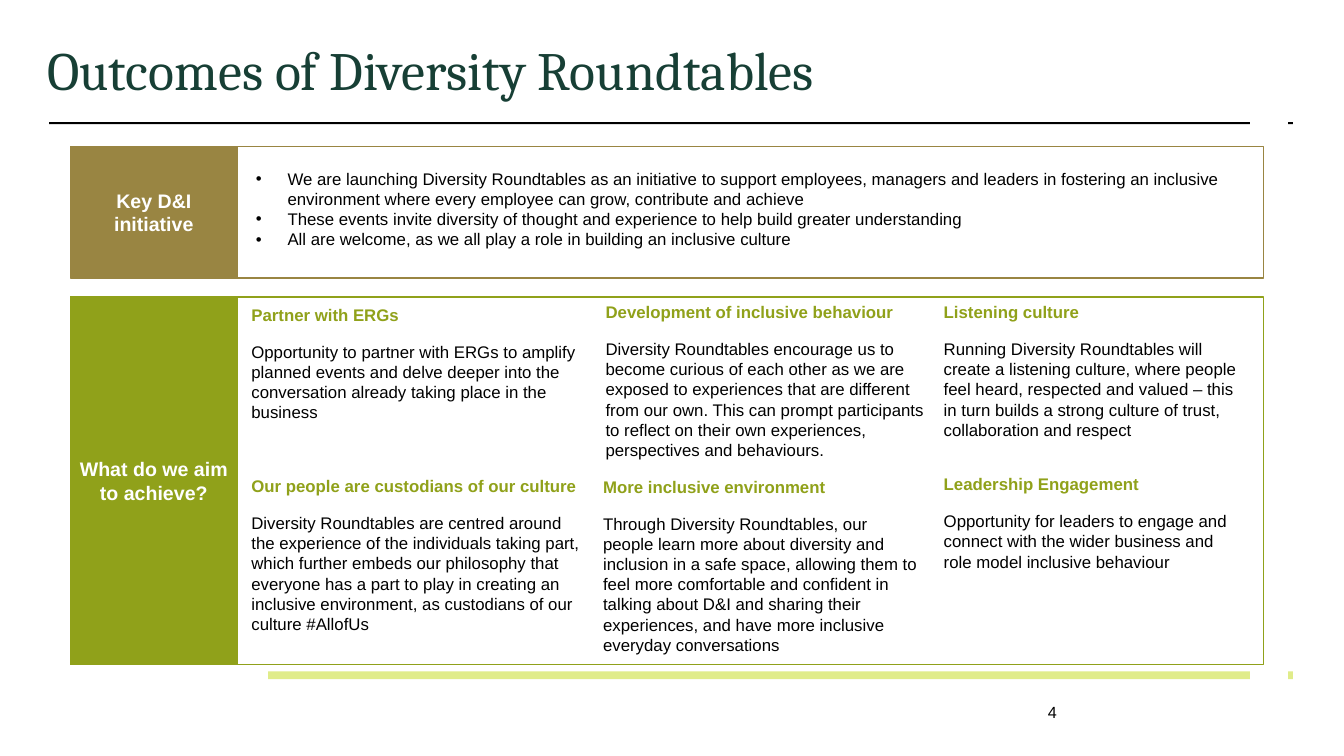
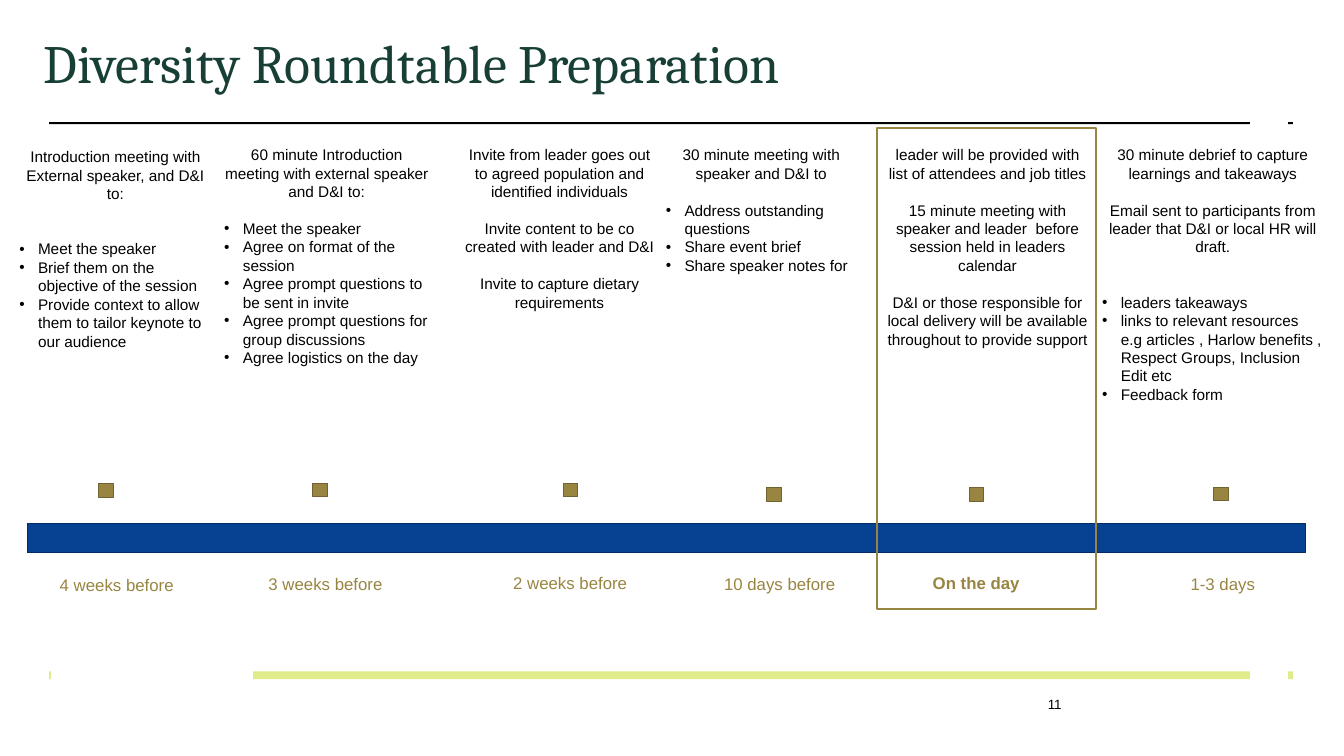
"""Build two slides on the outcomes and the preparation of Diversity Roundtables."""
from dataclasses import dataclass

from lxml.etree import SubElement
from pptx import Presentation
from pptx.dml.color import RGBColor
from pptx.enum.shapes import MSO_SHAPE
from pptx.enum.text import MSO_ANCHOR, PP_ALIGN
from pptx.oxml.ns import qn
from pptx.util import Pt


@dataclass(frozen=True)
class Theme:
    heading_font: str = "Cambria"
    body_font: str = "Arial"
    title_green: str = "173F35"
    olive: str = "90A11A"
    lime: str = "E0EC8A"
    gold: str = "998542"
    dark_gold: str = "716231"
    blue: str = "064192"
    dark_blue: str = "042C62"
    black: str = "000000"
    white: str = "FFFFFF"
    title: float = 60
    block: float = 21.8
    body: float = 18.7
    step: float = 17.1


@dataclass(frozen=True)
class Para:
    text: str
    size: float
    color: str = Theme.black
    bold: bool = False
    centred: bool = False
    before: float = 0
    indent: float = 0
    font: str = Theme.body_font


class Deck:
    def __init__(self, theme):
        self.theme = theme
        self.file = Presentation()
        self.file.slide_width, self.file.slide_height = Pt(1496.9), Pt(841.7)
        self.slide = None

    def start(self, title, title_at, number, number_at, number_size, footer_gap):
        t = self.theme
        self.slide = self.file.slides.add_slide(self.file.slide_layouts[6])
        self.rect((54.7, 136.1, 1385.3, 2.2), fill=t.black)
        self.rect((54.7, 747.4, 1385.3, 8.6), fill=t.lime)
        for gap in ((1393.2, 56.9, 41, 733.7), footer_gap):
            self.rect(gap, fill=t.white, line=t.white)
        heading = Para(title, t.title, t.title_green, font=t.heading_font)
        self.text((*title_at, 1389.6, 76.3), [heading], inset=0)
        self.text((1159.9, number_at, 337, 44.6), [Para(number, number_size)])

    def rect(self, box, fill=None, line=None, weight=1, label=None):
        shape = self.slide.shapes.add_shape(MSO_SHAPE.RECTANGLE, *map(Pt, box))
        shape.shadow.inherit = False
        if fill:
            shape.fill.solid()
            shape.fill.fore_color.rgb = RGBColor.from_string(fill)
        else:
            shape.fill.background()
        if line:
            shape.line.color.rgb = RGBColor.from_string(line)
            shape.line.width = Pt(weight)
        else:
            shape.line.fill.background()
        if label:
            shape.text_frame.vertical_anchor = MSO_ANCHOR.MIDDLE
            self.fill_text(shape.text_frame, [label])

    def text(self, box, paras, inset=None):
        frame = self.slide.shapes.add_textbox(*map(Pt, box)).text_frame
        if inset is not None:
            frame.margin_left = frame.margin_right = Pt(inset)
            frame.margin_top = frame.margin_bottom = Pt(inset)
        self.fill_text(frame, paras)

    def fill_text(self, frame, paras):
        frame.word_wrap = True
        for index, para in enumerate(paras):
            line = frame.add_paragraph() if index else frame.paragraphs[0]
            line.alignment = PP_ALIGN.CENTER if para.centred else PP_ALIGN.LEFT
            line.space_before = Pt(para.before)
            run = line.add_run()
            run.text = para.text
            run.font.name, run.font.size, run.font.bold = para.font, Pt(para.size), para.bold
            run.font.color.rgb = RGBColor.from_string(para.color)
            if para.indent:
                self.bullet(line, para.indent)

    def bullet(self, line, indent):
        props = line._p.get_or_add_pPr()
        props.set("marL", str(Pt(indent)))
        props.set("indent", str(-Pt(indent)))
        SubElement(props, qn("a:buFont")).set("typeface", self.theme.body_font)
        SubElement(props, qn("a:buChar")).set("char", "•")

    def topic(self, box, *sections):
        t = self.theme
        paras = []
        for heading, detail in sections:
            gap = 59.8 if paras else 0
            paras.append(Para(heading, t.body, t.olive, bold=True, before=gap))
            paras.append(Para(detail, t.body, before=t.body))
        self.text(box, paras)

    def panel(self, top, height, color, label):
        t = self.theme
        self.rect((78.5, top, 185.8, height), color, color,
                  label=Para(label, t.block, t.white, bold=True, centred=True))
        self.rect((78.5, top, 1329.1, height), line=color, weight=1.5)

    def stage(self, when, label_at, marker_at, column, notes, bullets=(), bullet_gap=1, bold=False):
        t = self.theme
        blank = 20.5
        paras = [Para(note, t.step, centred=True, before=blank if i else 0)
                 for i, note in enumerate(notes)]
        paras += [Para(item, t.step, indent=20.9, before=0 if i else blank * bullet_gap)
                  for i, item in enumerate(bullets)]
        left, top, width = column
        self.text((left, top, width, 240), paras)
        self.rect((*marker_at, 16.6, 15.1), t.gold, t.dark_gold)
        centre, label_top = label_at
        self.text((centre - 81, label_top, 162, 30.2),
                  [Para(when, t.body, t.gold, bold, centred=True)])


def outcomes(deck):
    t = deck.theme
    deck.start("Outcomes of Diversity Roundtables", (52.6, 41), "4", 778.3, 18,
               (52.6, 702.7, 245.5, 88.6))
    deck.panel(163.4, 146, t.gold, "Key D&I initiative")
    deck.text((277.9, 184.3, 1128.2, 97.9), [Para(aim, t.body, indent=35.3) for aim in (
        "We are launching Diversity Roundtables as an initiative to support employees, managers "
        "and leaders in fostering an inclusive environment where every employee can grow, "
        "contribute and achieve",
        "These events invite diversity of thought and experience to help build greater understanding",
        "All are welcome, as we all play a role in building an inclusive culture")])
    deck.panel(330.5, 409.7, t.olive, "What do we aim to achieve?")
    deck.topic(
        (272.9, 335.5, 386.6, 378.7),
        ("Partner with ERGs",
         "Opportunity to partner with ERGs to amplify planned events and delve deeper into the "
         "conversation already taking place in the business"),
        ("Our people are custodians of our culture",
         "Diversity Roundtables are centred around the experience of the individuals taking part, "
         "which further embeds our philosophy that everyone has a part to play in creating an "
         "inclusive environment, as custodians of our culture #AllofUs"))
    deck.topic(
        (667.4, 332.6, 369.4, 185),
        ("Development of inclusive behaviour",
         "Diversity Roundtables encourage us to become curious of each other as we are exposed to "
         "experiences that are different from our own. This can prompt participants to reflect on "
         "their own experiences, perspectives and behaviours."))
    deck.topic(
        (664.6, 527, 367.2, 208.1),
        ("More inclusive environment",
         "Through Diversity Roundtables, our people learn more about diversity and inclusion in a "
         "safe space, allowing them to feel more comfortable and confident in talking about D&I "
         "and sharing their experiences, and have more inclusive everyday conversations"))
    deck.topic(
        (1044, 332.6, 350.6, 162.7),
        ("Listening culture",
         "Running Diversity Roundtables will create a listening culture, where people feel heard, "
         "respected and valued – this in turn builds a strong culture of trust, collaboration and "
         "respect"))
    deck.topic(
        (1044, 524.2, 350.6, 117.4),
        ("Leadership Engagement",
         "Opportunity for leaders to engage and connect with the wider business and role model "
         "inclusive behaviour"))


def preparation(deck):
    t = deck.theme
    deck.start("Diversity Roundtable Preparation", (49, 33.1), "11", 771.8, 14.9,
               (56.9, 720.7, 224.6, 75.6))
    deck.rect((30.2, 583.2, 1423.4, 32.4), t.blue, t.dark_blue)
    deck.stage("4 weeks before", (130, 635.8), (109.4, 538.6), (14.4, 160.6, 228.2),
               ["Introduction meeting with External speaker, and D&I to:"],
               ["Meet the speaker",
                "Brief them on the objective of the session",
                "Provide context to allow them to tailor keynote to our audience"], bullet_gap=2)
    deck.stage("3 weeks before", (362.5, 635), (348.5, 537.8), (242.6, 158.4, 242.6),
               ["60 minute Introduction meeting with external speaker and D&I to:"],
               ["Meet the speaker",
                "Agree on format of the session",
                "Agree prompt questions to be sent in invite",
                "Agree prompt questions for group discussions",
                "Agree logistics on the day"])
    deck.stage("2 weeks before", (635, 633.6), (627.1, 537.8), (507.6, 158.4, 231.1),
               ["Invite from leader goes out to agreed population and identified individuals",
                "Invite content to be co created with leader and D&I",
                "Invite to capture dietary requirements"])
    deck.stage("10 days before", (868.3, 635), (853.9, 542.9), (734.4, 158.4, 226.8),
               ["30 minute meeting with speaker and D&I to"],
               ["Address outstanding questions",
                "Share event brief",
                "Share speaker notes for"])
    deck.stage("On the day", (1087.2, 634.3), (1079.3, 542.9), (977.8, 158.4, 244.1),
               ["leader will be provided with list of attendees and job titles",
                "15 minute meeting with speaker and leader  before session held in leaders calendar",
                "D&I or those responsible for local delivery will be available throughout to provide "
                "support"], bold=True)
    deck.stage("1-3 days", (1361.9, 635), (1351.4, 542.2), (1220.4, 158.4, 260.6),
               ["30 minute debrief to capture learnings and takeaways",
                "Email sent to participants from leader that D&I or local HR will draft."],
               ["leaders takeaways",
                "links to relevant resources e.g articles , Harlow benefits , Respect Groups, "
                "Inclusion Edit etc",
                "Feedback form"], bullet_gap=2)
    deck.rect((976.3, 142.6, 244.1, 535), line=t.gold, weight=2.25)


def main():
    deck = Deck(Theme())
    outcomes(deck)
    preparation(deck)
    deck.file.save("out.pptx")


if __name__ == "__main__":
    main()
